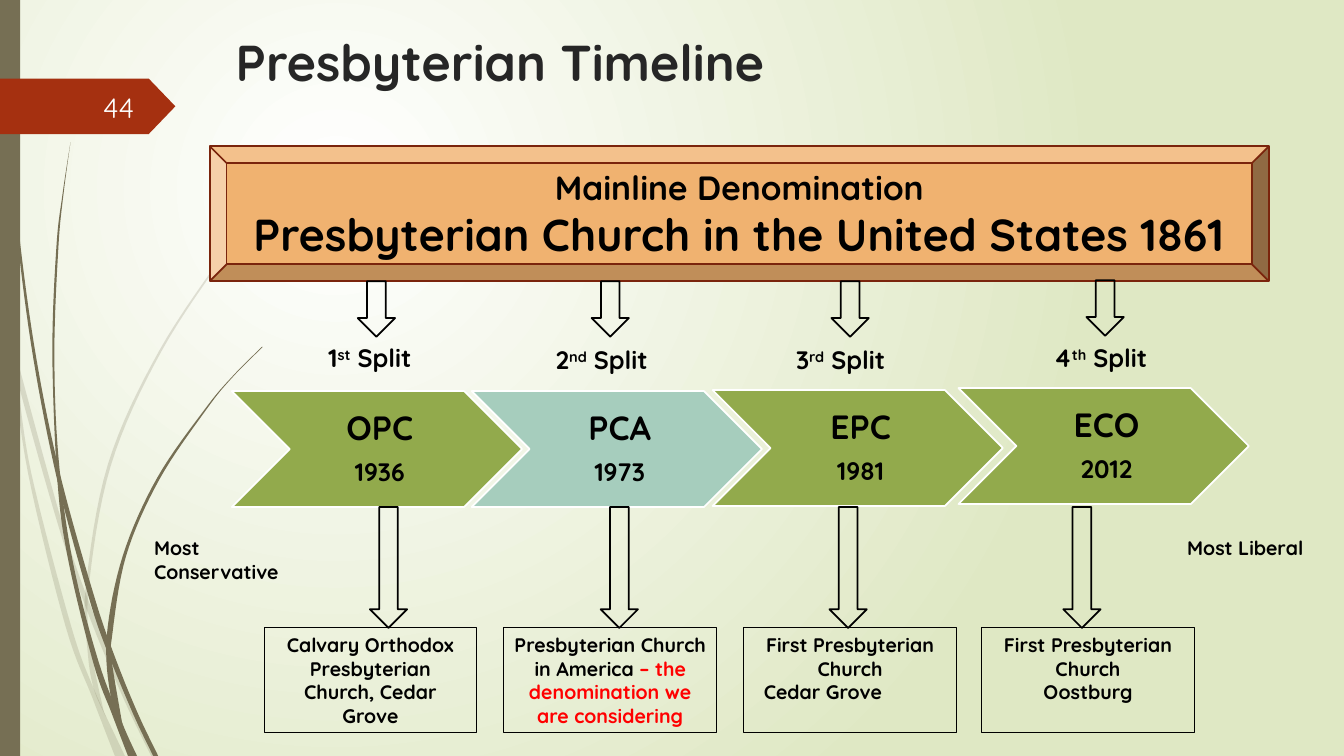
from pptx import Presentation
from pptx.dml.color import RGBColor
from pptx.enum.shapes import MSO_SHAPE
from pptx.enum.text import MSO_ANCHOR, PP_ALIGN
from pptx.oxml import parse_xml
from pptx.oxml.ns import nsdecls
from pptx.util import Cm, Pt

# Content: positions are in inches, converted to Cm by cm()
TITLE = "Presbyterian Timeline"
PAGE = "44"
MAINLINE = ["Mainline Denomination", "Presbyterian Church in the United States 1861"]
# Each split: number, ordinal, name, year, highlighted
SPLITS = [
    ("1", "st", "OPC", "1936", False),
    ("2", "nd", "PCA", "1973", True),
    ("3", "rd", "EPC", "1981", False),
    ("4", "th", "ECO", "2012", False),
]
# Each church: paragraphs of (runs, right indent); a run is (text, colour name)
CHURCHES = [
    [([("Calvary Orthodox Presbyterian Church, Cedar Grove", "text")], 0)],
    [([("Presbyterian Church in America ", "text"),
       ("– the denomination we are considering", "alert")], 0)],
    [([("First Presbyterian Church", "text")], 0), ([("Cedar Grove", "text")], 0.54)],
    [([("First Presbyterian Church", "text")], 0), ([("Oostburg", "text")], 0)],
]
# Each column: (left, top) of upper arrow, label, chevron; left of lower arrow and box
COLUMNS = [
    ((3.55, 2.79), (2.82, 3.35), (2.30, 3.88), 3.67, 2.62),
    ((5.87, 2.79), (5.12, 3.37), (4.68, 3.88), 5.96, 5.00),
    ((8.25, 2.79), (7.49, 3.37), (7.07, 3.87), 8.23, 7.38),
    ((10.78, 2.78), (10.07, 3.35), (9.51, 3.85), 10.55, 9.74),
]
# Scale ends: text, left, width, left indent
ENDS = [("Most Conservative", 1.43, 1.94, 0), ("Most Liberal", 11.35, 1.88, 0.33)]
# Grass blades: opacity in percent, one edge down, other edge back up
BLADES = [
    (20, [(0, 2.82), (0.09, 3.22), (0.14, 3.45), (0.62, 5.2), (0.92, 6.07),
          (1.27, 6.92), (1.55, 7.5)],
     [(1.5, 7.5), (1.23, 6.94), (0.88, 6.1), (0.58, 5.22), (0.17, 3.76), (0, 2.99)]),
    (20, [(0.11, 3.5), (0.17, 3.76), (0.31, 4.69), (0.7, 6.19), (0.93, 6.83), (1.24, 7.5)],
     [(1.14, 7.5), (0.92, 6.93), (0.65, 6.21), (0.28, 4.7), (0.11, 3.5)]),
    (20, [(3.12, 1.53), (2.68, 1.97), (2.28, 2.44), (1.58, 3.48), (1.07, 4.61),
          (0.85, 5.84), (0.87, 6.46), (0.93, 6.83), (1.05, 7.11)],
     [(1.03, 7.06), (0.91, 6.46), (0.88, 5.84), (1.1, 4.62), (1.6, 3.49),
      (2.29, 2.45), (2.68, 1.98), (3.12, 1.54)]),
    (100, [(0.04, 0), (0.05, 0.48), (0.08, 1.09), (0.19, 2.32), (0.36, 3.55), (0.6, 4.72),
           (0.93, 5.9), (1.13, 6.49), (1.36, 7.06), (1.57, 7.5)],
     [(1.52, 7.5), (1.32, 7.08), (1.06, 6.45), (0.88, 5.92), (0.57, 4.77),
      (0.33, 3.55), (0.17, 2.33), (0.07, 1.1), (0.03, 0)]),
    (100, [(0.7, 1.41), (0.62, 1.93), (0.56, 2.45), (0.52, 3.49), (0.57, 4.77),
           (0.68, 5.57), (0.93, 6.59), (1.11, 7.08), (1.27, 7.5)],
     [(1.36, 7.5), (1.22, 7.19), (0.98, 6.57), (0.72, 5.56), (0.58, 4.53),
      (0.54, 3.49), (0.58, 2.45), (0.63, 1.93), (0.7, 1.41)]),
    (100, [(2.6, 3.44), (2.31, 3.73), (2.04, 4.05), (1.56, 4.74), (1.22, 5.51),
           (1.06, 6.31), (1.1, 6.91), (1.22, 7.19)],
     [(1.21, 7.16), (1.11, 6.56), (1.11, 6.33), (1.25, 5.52), (1.58, 4.76),
      (2.05, 4.06), (2.31, 3.74), (2.61, 3.44)]),
]

THEME = {
    "font": "Quicksand",
    "color": {"text": "000000", "title": "262626", "page": "FEFFFF", "alert": "FF0000",
              "grass": "766F54", "flag": "A53010", "split": "92AA4C", "chosen": "A6CDBD",
              "edge": "FFFFFF", "bevel": "F0B270", "bevel_edge": "7A240C",
              "bg_in": "FFFFFF", "bg_out": "DFE8C4"},
    "size": {"title": 36, "church": 32, "name": 24, "page": 20, "label": 18, "note": 14},
}


def cm(inches):
    return Cm(inches * 2.54)


def rgb(name):
    return RGBColor.from_string(THEME["color"][name])


def paint(shape, fill=None, line=None, width=1.25):
    shape.shadow.inherit = False
    if fill:
        shape.fill.solid()
        shape.fill.fore_color.rgb = rgb(fill)
    else:
        shape.fill.background()
    if line:
        shape.line.color.rgb = rgb(line)
        shape.line.width = Pt(width)
    else:
        shape.line.fill.background()
    return shape


def add_shape(kind, box, fill=None, line=None, width=1.25):
    return paint(s.shapes.add_shape(kind, *map(cm, box)), fill, line, width)


def add_text(box):
    return s.shapes.add_textbox(*map(cm, box))


def frame(shape, anchor=MSO_ANCHOR.TOP):
    tf = shape.text_frame
    tf.word_wrap = True
    tf.vertical_anchor = anchor
    return tf


def add_par(tf, runs, align=PP_ALIGN.CENTER, first=False):
    """Add a paragraph of (text, size name, colour name, bold, superscript) runs."""
    p = tf.paragraphs[0] if first else tf.add_paragraph()
    p.alignment = align
    for text, size, color, bold, raised in runs:
        r = p.add_run()
        r.text = text
        r.font.name = THEME["font"]
        r.font.size = Pt(THEME["size"][size])
        r.font.bold = bold
        r.font.color.rgb = rgb(color)
        if raised:
            r._r.get_or_add_rPr().set("baseline", "30000")
    return p


def smooth_edge(pts, steps=8):
    """Sample a Catmull-Rom curve through the points."""
    ext = [pts[0], *pts, pts[-1]]
    out = [pts[0]]
    for a, b, c, d in zip(ext, ext[1:], ext[2:], ext[3:]):
        for t in (k / steps for k in range(1, steps + 1)):
            out.append(tuple(
                0.5 * (2 * q + (v - o) * t + (2 * o - 5 * q + 4 * v - w) * t ** 2
                       + (3 * q - o - 3 * v + w) * t ** 3)
                for o, q, v, w in zip(a, b, c, d)))
    return out


prs = Presentation()
prs.slide_width, prs.slide_height = Cm(33.87), Cm(19.05)
s = prs.slides.add_slide(prs.slide_layouts[6])

# Background: radial gradient centred at a quarter of the slide
fill = s.background.fill
fill.gradient()
for stop, name in zip(fill.gradient_stops, ("bg_in", "bg_out")):
    stop.color.rgb = rgb(name)
grad = s._element.find(".//{*}bgPr/{*}gradFill")
grad.replace(grad.find("{*}lin"), parse_xml(
    f'<a:path {nsdecls("a")} path="circle">'
    '<a:fillToRect l="50000" t="50000" r="100000" b="100000"/></a:path>'))

# Grass blades, side bar and page flag
for opacity, down, up in BLADES:
    pts = [(cm(x), cm(y)) for x, y in smooth_edge(down) + smooth_edge(up)]
    fb = s.shapes.build_freeform(*pts[0])
    fb.add_line_segments(pts[1:], close=True)
    blade = paint(fb.convert_to_shape(), "grass")
    if opacity < 100:
        blade._element.find(".//{*}solidFill/{*}srgbClr").append(
            parse_xml(f'<a:alpha {nsdecls("a")} val="{opacity * 1000}"/>'))
add_shape(MSO_SHAPE.RECTANGLE, (0, 0, 0.2, 7.5), "grass")
flag = add_shape(MSO_SHAPE.PENTAGON, (0, 0.78, 1.74, 0.55), "flag")
flag.adjustments[0] = 0.48

# Title and page number
add_par(frame(add_text((2.24, 0.26, 9.75, 0.84))),
        [(TITLE, "title", "title", True, False)], PP_ALIGN.LEFT, True)
add_par(frame(add_text((0.58, 0.86, 0.85, 0.4)), MSO_ANCHOR.MIDDLE),
        [(PAGE, "page", "page", False, False)], PP_ALIGN.RIGHT, True)

# Mainline denomination
bevel = add_shape(MSO_SHAPE.BEVEL, (2.08, 1.45, 10.51, 1.34), "bevel", "bevel_edge")
tf = frame(bevel, MSO_ANCHOR.MIDDLE)
for i, (text, size) in enumerate(zip(MAINLINE, ("name", "church"))):
    add_par(tf, [(text, size, "text", True, False)], first=i == 0)

# Splits: arrow, label, chevron, arrow, church box
for split, church, column in zip(SPLITS, CHURCHES, COLUMNS):
    number, ordinal, name, year, chosen = split
    arrow_at, label_at, chevron_at, lower_x, box_x = column
    add_shape(MSO_SHAPE.DOWN_ARROW, (*arrow_at, 0.37, 0.55), line="text")
    add_par(frame(add_text((*label_at, 1.7, 0.4))),
            [(number, "label", "text", True, False), (ordinal, "label", "text", True, True),
             (" Split", "label", "text", True, False)], first=True)

    chevron = add_shape(MSO_SHAPE.CHEVRON, (*chevron_at, 2.88, 1.15),
                        "chosen" if chosen else "split", "edge")
    tf = frame(chevron, MSO_ANCHOR.MIDDLE)
    tf.margin_left = cm(0.1)
    tf.margin_right = tf.margin_top = tf.margin_bottom = cm(0.04)
    for i, (text, size) in enumerate(((name, "name"), (year, "label"))):
        p = add_par(tf, [(text, size, "text", True, False)], first=i == 0)
        p.line_spacing = 0.9
        p.space_after = Pt(0.35 * THEME["size"][size])

    add_shape(MSO_SHAPE.DOWN_ARROW, (lower_x, 5.03, 0.37, 1.2), line="text")
    tf = frame(add_shape(MSO_SHAPE.RECTANGLE, (box_x, 6.23, 2.11, 1.04), line="text", width=0.75))
    for i, (runs, indent) in enumerate(church):
        p = add_par(tf, [(text, "note", color, True, False) for text, color in runs], first=i == 0)
        if indent:
            p._p.get_or_add_pPr().set("marR", str(cm(indent)))

# Ends of the scale
for text, left, width, indent in ENDS:
    p = add_par(frame(add_text((left, 5.27, width, 0.34))),
                [(text, "note", "text", True, False)], PP_ALIGN.LEFT, True)
    if indent:
        p._p.get_or_add_pPr().set("marL", str(cm(indent)))

prs.save("out.pptx")
